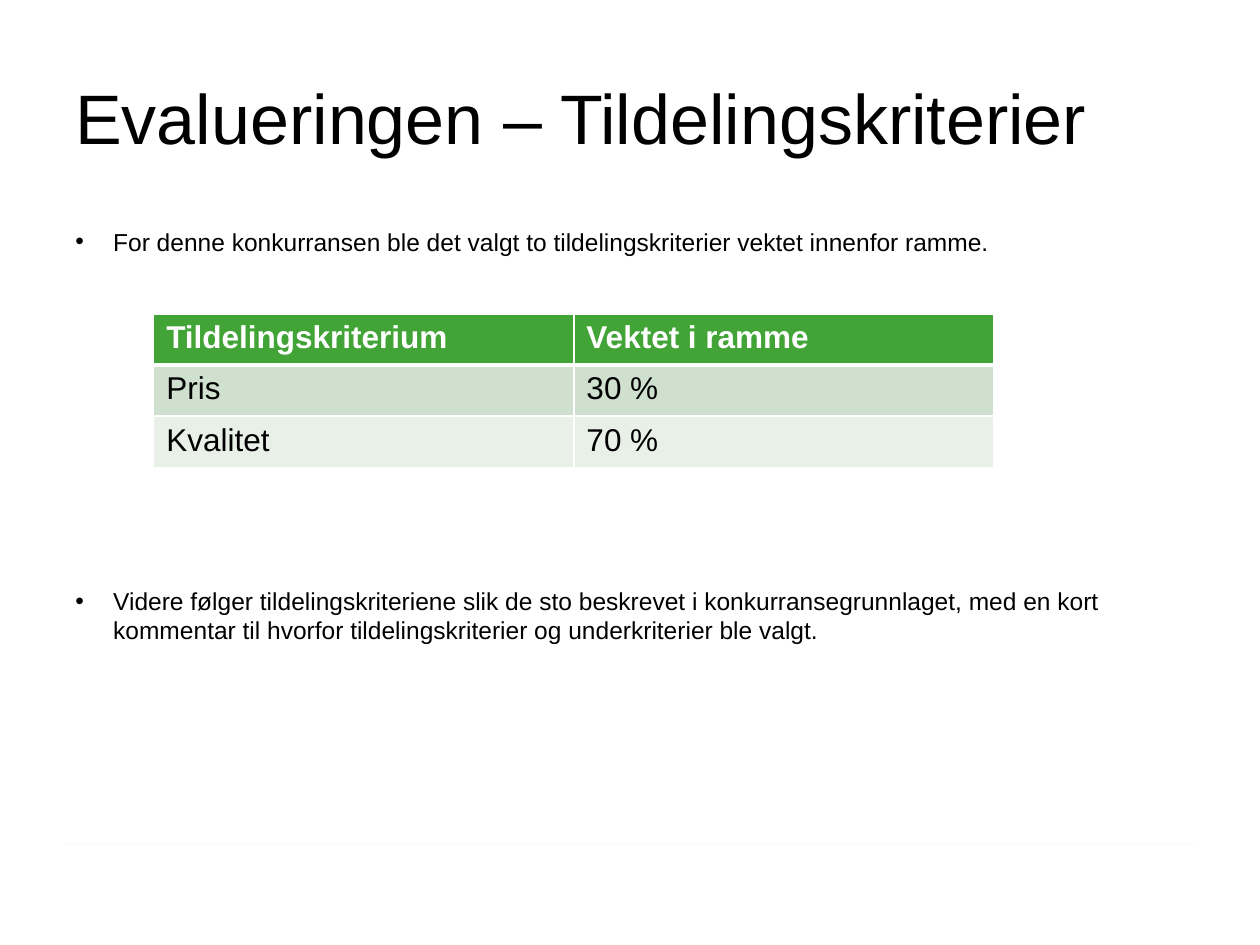
import pptx
import pptx.util
import pptx.dml.color
import pptx.enum.shapes
import pptx.enum.text
import pptx.oxml.ns
from lxml import etree

Inches = pptx.util.Inches
Pt = pptx.util.Pt
RGBColor = pptx.dml.color.RGBColor
qn = pptx.oxml.ns.qn

BLACK = RGBColor(0x00, 0x00, 0x00)
WHITE = RGBColor(0xFF, 0xFF, 0xFF)
GREEN = RGBColor(0x42, 0xA4, 0x37)
PALE_GREEN = RGBColor(0xCF, 0xE0, 0xCE)
PALEST_GREEN = RGBColor(0xE9, 0xF0, 0xE8)
FOOTER_GREY = RGBColor(0xF9, 0xF9, 0xF9)

CRITERIA = [
    ("Tildelingskriterium", "Vektet i ramme"),
    ("Pris", "30 %"),
    ("Kvalitet", "70 %"),
]
BULLETS = [
    ("For denne konkurransen ble det valgt to tildelingskriterier vektet innenfor ramme.", 0),
    ("Videre følger tildelingskriteriene slik de sto beskrevet i konkurransegrunnlaget, "
     "med en kort kommentar til hvorfor tildelingskriterier og underkriterier ble valgt.", 188.5),
]


class SlideBuilder:
    title_format = {"name": "Arial", "size": Pt(40), "bold": False}
    body_format = {"name": "Arial", "size": Pt(14), "bold": False}
    header_format = {"name": "Arial", "size": Pt(18), "bold": True}
    cell_format = {"name": "Arial", "size": Pt(18), "bold": False}
    row_fills = [GREEN, PALE_GREEN, PALEST_GREEN]

    def __init__(self, slide):
        self.slide = slide

    def format_font(self, font, values, color):
        for name, value in values.items():
            setattr(font, name, value)
        font.color.rgb = color

    def text_frame(self, left, top, width, height):
        box = self.slide.shapes.add_textbox(
            Inches(left), Inches(top), Inches(width), Inches(height))
        box.text_frame.word_wrap = True
        return box.text_frame

    def title(self, text, *bounds):
        frame = self.text_frame(*bounds)
        frame.vertical_anchor = pptx.enum.text.MSO_ANCHOR.MIDDLE
        paragraph = frame.paragraphs[0]
        paragraph.text = text
        self.format_font(paragraph.font, self.title_format, BLACK)

    def bullets(self, items, *bounds):
        """Write (text, points of space before) pairs as bullets."""
        frame = self.text_frame(*bounds)
        for index, (text, space_before) in enumerate(items):
            paragraph = frame.add_paragraph() if index else frame.paragraphs[0]
            paragraph.text = text
            properties = paragraph._p.get_or_add_pPr()
            properties.set("marL", str(Inches(0.3)))
            properties.set("indent", str(Inches(-0.3)))
            etree.SubElement(properties, qn("a:buFont"), typeface="Arial")
            etree.SubElement(properties, qn("a:buChar"), char="•")
            paragraph.space_before = Pt(space_before)
            self.format_font(paragraph.font, self.body_format, BLACK)

    def cell_borders(self, cell, widths):
        """Draw white borders from a dict of side letter to width in points."""
        properties = cell._tc.get_or_add_tcPr()
        for position, (side, width) in enumerate(widths.items()):
            border = etree.Element(qn(f"a:ln{side}"), w=str(Pt(width)))
            fill = etree.SubElement(border, qn("a:solidFill"))
            etree.SubElement(fill, qn("a:srgbClr"), val=str(WHITE))
            properties.insert(position, border)

    def table(self, rows, left, top, width, height):
        table = self.slide.shapes.add_table(
            len(rows), len(rows[0]), Inches(left), Inches(top),
            Inches(width), Inches(height)).table
        for row_index, values in enumerate(rows):
            is_header = row_index == 0
            for column_index, value in enumerate(values):
                cell = table.cell(row_index, column_index)
                cell.text = value
                cell.fill.solid()
                cell.fill.fore_color.rgb = self.row_fills[row_index]
                self.format_font(
                    cell.text_frame.paragraphs[0].font,
                    self.header_format if is_header else self.cell_format,
                    WHITE if is_header else BLACK)
                self.cell_borders(cell, {
                    "L": 1, "R": 1,
                    "T": 3 if row_index == 1 else 1,
                    "B": 3 if is_header else 1})

    def line(self, start_x, start_y, end_x, end_y):
        connector = self.slide.shapes.add_connector(
            pptx.enum.shapes.MSO_CONNECTOR.STRAIGHT,
            Inches(start_x), Inches(start_y), Inches(end_x), Inches(end_y))
        connector.line.color.rgb = FOOTER_GREY
        connector.line.width = Pt(0.75)
        etree.SubElement(connector._element.spPr, qn("a:effectLst"))


def main():
    presentation = pptx.Presentation()
    presentation.slide_width = Inches(10)
    presentation.slide_height = Inches(7.5)
    builder = SlideBuilder(presentation.slides.add_slide(presentation.slide_layouts[6]))
    builder.line(0.5, 6.7, 9.5, 6.7)
    builder.title("Evalueringen – Tildelingskriterier", 0.5, 0.3, 9, 1.25)
    builder.bullets(BULLETS, 0.5, 1.75, 9, 4.95)
    builder.table(CRITERIA, 1.22, 2.49, 6.67, 1.22)
    presentation.save("out.pptx")


if __name__ == "__main__":
    main()
